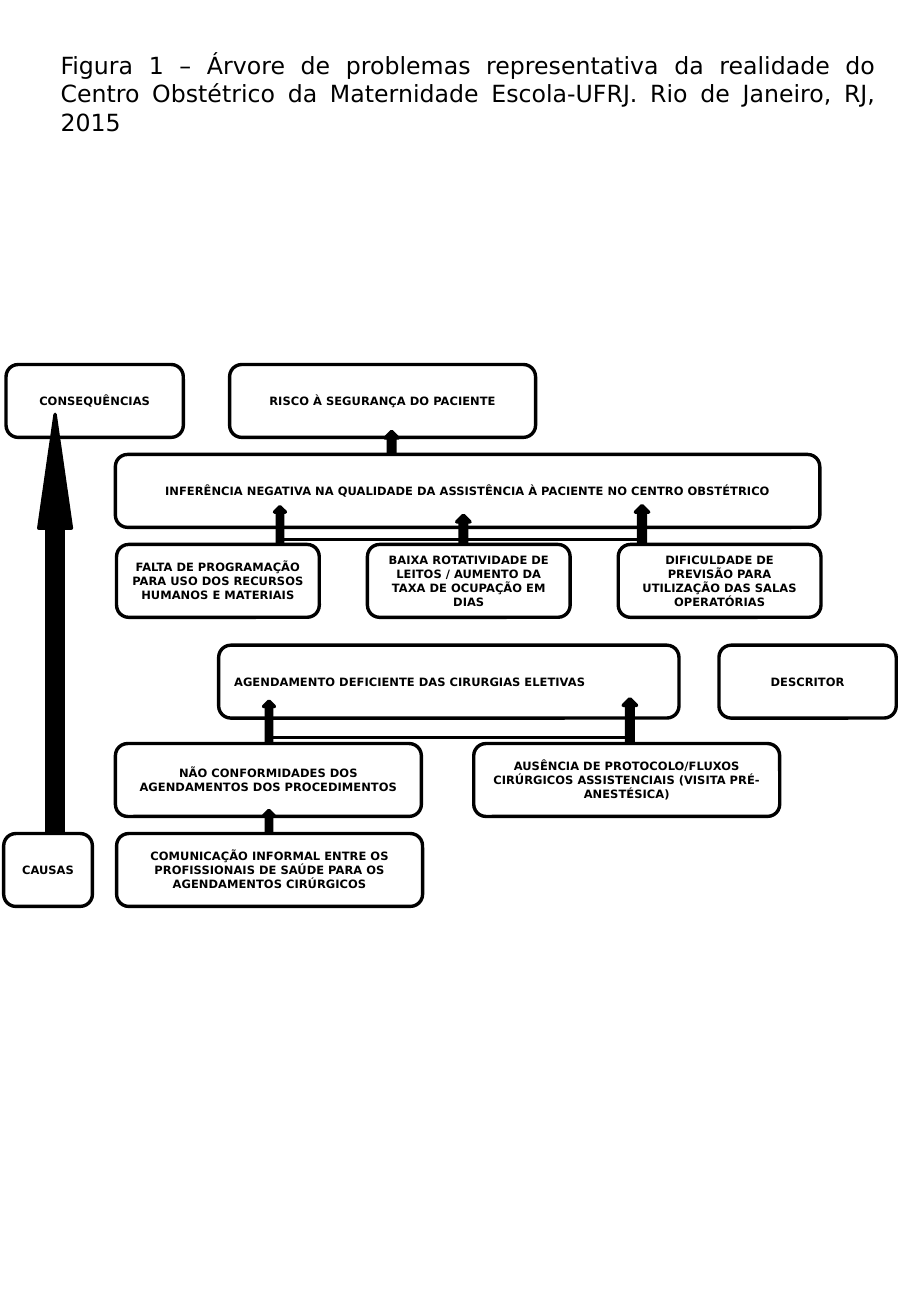
from pptx import Presentation
from pptx.dml.color import RGBColor
from pptx.enum import shapes, text
from pptx.oxml import ns
from pptx.util import Pt
from lxml import etree

COLORS = {"ink": "000000", "paper": "FFFFFF"}
FONT = "DejaVu Sans"
BOX_HEIGHT = 43.2
ARROW_HEIGHT = 27.4
LINE_WIDTH = 2

LEVELS = [
    {"boxes": [(3.6, 216, 105.1, "CONSEQUÊNCIAS"),
               (136.1, 216, 181.4, "RISCO À SEGURANÇA DO PACIENTE")],
     "arrows": [(228.2, 255.6, 7.9)]},
    {"boxes": [(68.4, 269.3, 417.6, "INFERÊNCIA NEGATIVA NA QUALIDADE DA "
                "ASSISTÊNCIA À PACIENTE NO CENTRO OBSTÉTRICO")],
     "line": (165.6, 378.7, 319.7),
     "arrows": [(162.7, 300.2, 6.5), (270.7, 305.3, 7.9), (376.6, 299.5, 7.9)]},
    {"boxes": [(69.1, 322.6, 120.2, "FALTA DE PROGRAMAÇÃO PARA USO DOS RECURSOS HUMANOS E MATERIAIS"),
               (217.8, 322.6, 120.2, "BAIXA ROTATIVIDADE DE LEITOS / AUMENTO DA TAXA DE OCUPAÇÃO EM DIAS"),
               (366.5, 322.6, 120.2, "DIFICULDADE DE PREVISÃO PARA UTILIZAÇÃO DAS SALAS OPERATÓRIAS")]},
    {"boxes": [(129.6, 382.3, 272.9, "AGENDAMENTO DEFICIENTE DAS CIRURGIAS ELETIVAS"),
               (426.2, 382.3, 105.1, "DESCRITOR")],
     "line": (159.1, 372.2, 437),
     "arrows": [(156.2, 415.4, 6.5), (369.4, 414, 7.9)]},
    {"boxes": [(68.4, 440.6, 181.4, "NÃO CONFORMIDADES DOS AGENDAMENTOS DOS PROCEDIMENTOS"),
               (280.8, 440.6, 181.4, "AUSÊNCIA DE PROTOCOLO/FLUXOS CIRÚRGICOS "
                "ASSISTENCIAIS (VISITA PRÉ-ANESTÉSICA)")],
     "arrows": [(156.2, 480.2, 6.5)]},
    {"boxes": [(2.2, 493.9, 52.6, "CAUSAS"),
               (69.1, 493.9, 181.4, "COMUNICAÇÃO INFORMAL ENTRE OS PROFISSIONAIS "
                "DE SAÚDE PARA OS AGENDAMENTOS CIRÚRGICOS")]},
]
LEFT_ALIGNED = {"AGENDAMENTO DEFICIENTE DAS CIRURGIAS ELETIVAS"}


def color(name):
    """Return a named colour."""
    return RGBColor.from_string(COLORS[name])


def write(shape, words, size, alignment, bold=False):
    """Write one paragraph of text in a shape."""
    frame = shape.text_frame
    frame.word_wrap = True
    paragraph = frame.paragraphs[0]
    paragraph.alignment = alignment
    run = paragraph.add_run()
    run.text = words
    run.font.name = FONT
    run.font.size = Pt(size)
    run.font.bold = bold
    run.font.color.rgb = color("ink")


def add_outlined(slide, kind, left, top, width, height, fill):
    """Add a filled preset shape with a black outline."""
    shape = slide.shapes.add_shape(kind, Pt(left), Pt(top), Pt(width), Pt(height))
    shape.shadow.inherit = False
    shape.fill.solid()
    shape.fill.fore_color.rgb = color(fill)
    shape.line.color.rgb = color("ink")
    shape.line.width = Pt(LINE_WIDTH)
    return shape


def add_box(slide, left, top, width, words):
    """Add a rounded box of the problem tree."""
    box = add_outlined(slide, shapes.MSO_SHAPE.ROUNDED_RECTANGLE,
                       left, top, width, BOX_HEIGHT, "paper")
    box.text_frame.vertical_anchor = text.MSO_ANCHOR.MIDDLE
    alignment = text.PP_ALIGN.LEFT if words in LEFT_ALIGNED else text.PP_ALIGN.CENTER
    write(box, words, 6.8, alignment, bold=True)


def add_arrow(slide, left, top, width, height=ARROW_HEIGHT):
    """Add a black arrow pointing up."""
    return add_outlined(slide, shapes.MSO_SHAPE.UP_ARROW, left, top, width, height, "ink")


def add_line(slide, start, end, top):
    """Add a horizontal line that joins arrows."""
    line = slide.shapes.add_connector(shapes.MSO_CONNECTOR.STRAIGHT,
                                      Pt(start), Pt(top), Pt(end), Pt(top))
    line.line.color.rgb = color("ink")
    line.line.width = Pt(LINE_WIDTH)
    etree.SubElement(line._element.spPr, ns.qn("a:effectLst"))


def add_level(slide, level):
    """Add the boxes of a level and the arrows that reach it."""
    for box in level["boxes"]:
        add_box(slide, *box)
    if "line" in level:
        add_line(slide, *level["line"])
    for arrow in level.get("arrows", []):
        add_arrow(slide, *arrow)


def add_title(slide, words):
    """Add the justified figure title."""
    title = slide.shapes.add_textbox(Pt(28.8), Pt(26.6), Pt(497.5), Pt(58.3))
    write(title, words, 14, text.PP_ALIGN.JUSTIFY)
    title.text_frame.auto_size = text.MSO_AUTO_SIZE.SHAPE_TO_FIT_TEXT


def main():
    """Build the problem tree slide."""
    presentation = Presentation()
    presentation.slide_width, presentation.slide_height = Pt(540), Pt(779.76)
    slide = presentation.slides.add_slide(presentation.slide_layouts[6])
    for level in LEVELS[:-1]:
        add_level(slide, level)
    main_arrow = add_arrow(slide, 23, 245.5, 19.4, 264.2)
    main_arrow.adjustments[1] = 3.48
    add_level(slide, LEVELS[-1])
    add_title(slide, "Figura 1 – Árvore de problemas representativa da realidade do Centro "
              "Obstétrico da Maternidade Escola-UFRJ. Rio de Janeiro, RJ, 2015")
    presentation.save("out.pptx")


if __name__ == "__main__":
    main()
